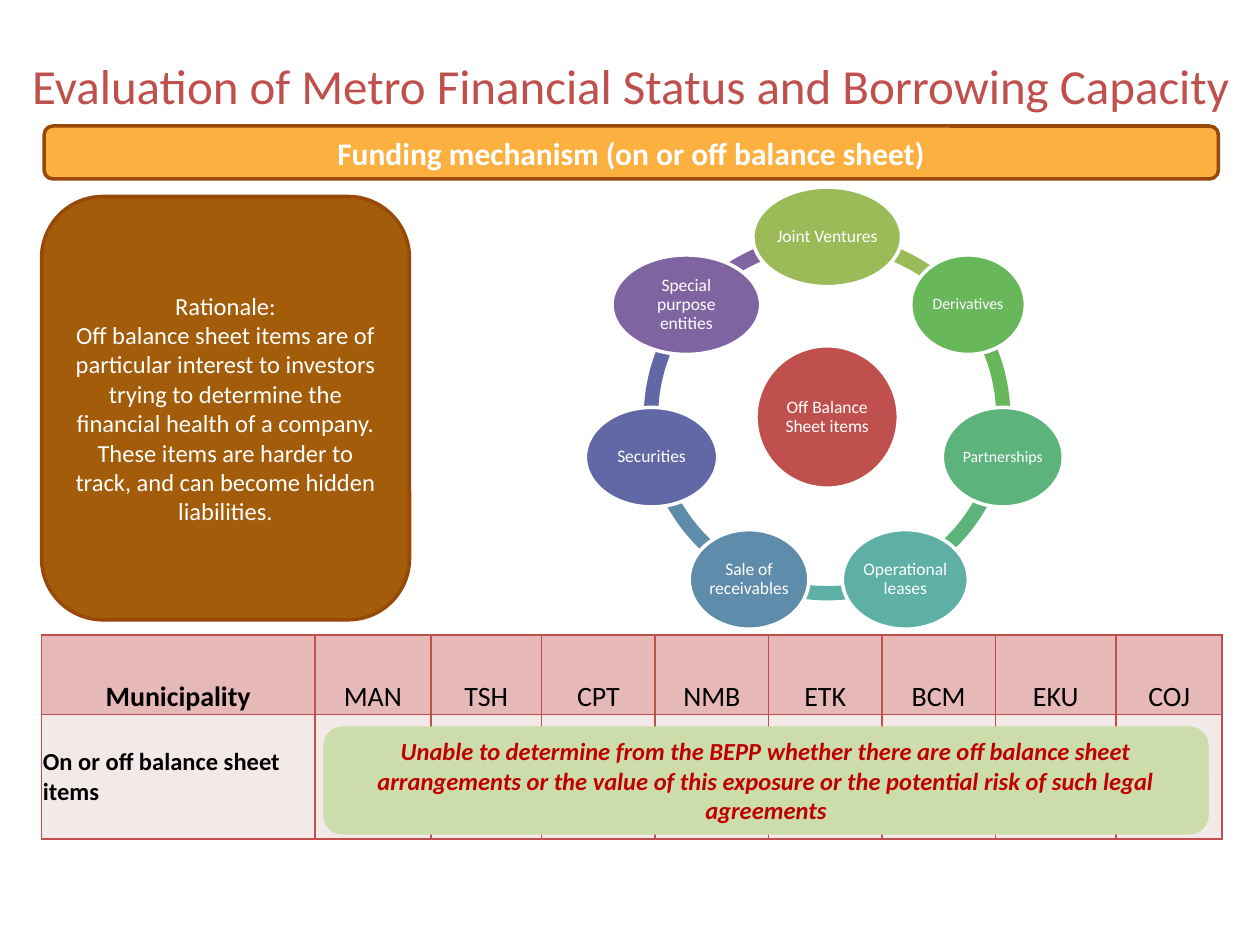
from dataclasses import dataclass
from math import cos, radians, sin

from lxml.etree import SubElement
from pptx import Presentation
from pptx.dml.color import RGBColor
from pptx.enum.shapes import MSO_SHAPE as Shape
from pptx.enum.text import MSO_ANCHOR as Anchor, PP_ALIGN as Align
from pptx.oxml.ns import qn
from pptx.util import Emu, Inches, Pt

FONT = "Calibri"
WHITE = RGBColor(0xFF, 0xFF, 0xFF)
BLACK = RGBColor(0, 0, 0)
RED = RGBColor(0xC0, 0x50, 0x4D)
DARK_RED = RGBColor(0xC0, 0, 0)
ORANGE = RGBColor(0xFB, 0xB0, 0x40)
BROWN = RGBColor(0xA2, 0x5C, 0x0A)
DARK_BROWN = RGBColor(0x98, 0x48, 0x07)
PINK = RGBColor(0xE6, 0xB9, 0xB8)
PALE_PINK = RGBColor(0xF4, 0xE9, 0xE9)
PALE_GREEN = RGBColor(0xCC, 0xDD, 0xAB)
GREEN = RGBColor(0x9B, 0xBB, 0x59)
LEAF = RGBColor(0x69, 0xB7, 0x5B)
JADE = RGBColor(0x5C, 0xB3, 0x7C)
TEAL = RGBColor(0x5E, 0xAF, 0xA6)
STEEL = RGBColor(0x60, 0x8C, 0xAB)
INDIGO = RGBColor(0x62, 0x67, 0xA6)
PURPLE = RGBColor(0x80, 0x64, 0xA2)

# Slide grid: 100 columns by 75 rows
prs = Presentation()
prs.slide_width, prs.slide_height = Inches(10), Inches(7.5)
COL, ROW = prs.slide_width / 100, prs.slide_height / 75


@dataclass
class Box:
    """A place on the grid, in columns and rows."""
    x: float
    y: float
    w: float
    h: float

    def emu(self) -> list[Emu]:
        return [Emu(round(n)) for n in
                (self.x * COL, self.y * ROW, self.w * COL, self.h * ROW)]


@dataclass
class Style:
    size: float
    color: RGBColor = WHITE
    bold: bool = False
    italic: bool = False


@dataclass
class Node:
    """One item of the cycle, with its width in columns."""
    text: str
    width: float
    color: RGBColor
    size: float = 10


def write(tf, text: str, style: Style, align=Align.CENTER, spacing=None) -> None:
    tf.text = text
    tf.word_wrap = True
    for p in tf.paragraphs:
        p.alignment = align
        if spacing:
            p.line_spacing = spacing
        for r in p.runs:
            f = r.font
            f.name, f.size, f.color.rgb = FONT, Pt(style.size), style.color
            f.bold, f.italic = style.bold, style.italic


def set_insets(obj, inset: float) -> None:
    obj.margin_left = obj.margin_right = Inches(inset)
    obj.margin_top = obj.margin_bottom = Inches(inset)


def add_shape(s, kind, box: Box, fill: RGBColor, line=None):
    sp = s.shapes.add_shape(kind, *box.emu())
    sp.shadow.inherit = False
    sp.fill.solid()
    sp.fill.fore_color.rgb = fill
    if line is None:
        sp.line.fill.background()
    else:
        sp.line.color.rgb, sp.line.width = line, Pt(2)
    return sp


def add_panel(s, box: Box, fill: RGBColor, line: RGBColor, text: str, style: Style) -> None:
    sp = add_shape(s, Shape.ROUNDED_RECTANGLE, box, fill, line)
    sp.text_frame.vertical_anchor = Anchor.MIDDLE
    write(sp.text_frame, text, style)


def add_bubble(s, cx: float, cy: float, w: float, h: float, node: Node) -> None:
    sp = add_shape(s, Shape.OVAL, Box(cx - w / 2, cy - h / 2, w, h), node.color, WHITE)
    sp.text_frame.vertical_anchor = Anchor.MIDDLE
    set_insets(sp.text_frame, 0.01)
    write(sp.text_frame, node.text, Style(node.size), spacing=0.9)


def add_cycle(s, cx: float, cy: float, radius: float, hub: Node, nodes: list[Node]) -> None:
    step = 360 / len(nodes)
    ring = 29.1
    # Arcs run clockwise from each node to the next; angles are 0.6 units a degree
    for i, node in reversed(list(enumerate(nodes))):
        arc = add_shape(s, Shape.BLOCK_ARC,
                        Box(cx - ring / 2, cy - ring / 2, ring, ring), node.color)
        for k in (0, 1):
            arc.adjustments[k] = (270 + (i + k) * step) % 360 * 0.6
        arc.adjustments[2] = 0.039
    add_bubble(s, cx, cy, hub.width, hub.width, hub)
    for i, node in enumerate(nodes):
        angle = radians(i * step)
        add_bubble(s, cx + radius * sin(angle), cy - radius * cos(angle),
                   node.width, 7.9, node)


def style_cell(cell, fill: RGBColor, anchor) -> None:
    tc_pr = cell._tc.get_or_add_tcPr()
    for side in ("a:lnL", "a:lnR", "a:lnT", "a:lnB"):
        ln = SubElement(tc_pr, qn(side), w=str(Pt(1)))
        SubElement(SubElement(ln, qn("a:solidFill")), qn("a:srgbClr"), val=str(RED))
    cell.fill.solid()
    cell.fill.fore_color.rgb = fill
    cell.vertical_anchor = anchor
    set_insets(cell, 0.01)
    cell.margin_bottom = 0


def add_metro_table(s, box: Box, widths: list[float], heights: list[float],
                    header: list[str], label: str) -> None:
    table = s.shapes.add_table(2, len(widths), *box.emu()).table
    table.first_row = table.horz_banding = False
    for column, w in zip(table.columns, widths):
        column.width = Emu(round(w * COL))
    for row, h in zip(table.rows, heights):
        row.height = Emu(round(h * ROW))
    for i, name in enumerate(header):
        top, low = table.cell(0, i), table.cell(1, i)
        style_cell(top, PINK, Anchor.BOTTOM)
        style_cell(low, PALE_PINK, Anchor.MIDDLE)
        write(top.text_frame, name, Style(16, BLACK, bold=i == 0))
    write(table.cell(1, 0).text_frame, label, Style(14, BLACK, bold=True), Align.LEFT)


def main() -> None:
    s = prs.slides.add_slide(prs.slide_layouts[6])

    # Title and banner
    tf = s.shapes.add_textbox(*Box(1.7, 4.2, 96.7, 5.1).emu()).text_frame
    set_insets(tf, 0)
    tf.vertical_anchor = Anchor.MIDDLE
    write(tf, "Evaluation of Metro Financial Status and Borrowing Capacity", Style(28, RED))
    add_panel(s, Box(3.5, 10, 93.2, 4.2), ORANGE, DARK_BROWN,
              "Funding mechanism (on or off balance sheet)", Style(18, bold=True))

    # Rationale
    add_panel(s, Box(3.3, 15.6, 29.2, 33.6), BROWN, DARK_BROWN,
              "Rationale:\nOff balance sheet items are of particular interest to investors "
              "trying to determine the financial health of a company. These items are "
              "harder to track, and can become hidden liabilities.", Style(14))

    # Municipality table and the finding laid over it
    add_metro_table(s, Box(3.3, 50.4, 93.4, 16.2),
                    [21.7, 9.2, 8.8, 9, 9, 9, 9, 9.6, 8.4], [6.3, 9.9],
                    ["Municipality", "MAN", "TSH", "CPT", "NMB", "ETK", "BCM", "EKU", "COJ"],
                    "On or off balance sheet items")
    add_panel(s, Box(25.8, 57.8, 70, 8.3), PALE_GREEN, PALE_GREEN,
              "Unable to determine from the BEPP whether there are off balance sheet "
              "arrangements or the value of this exposure or the potential risk of such "
              "legal agreements", Style(14, DARK_RED, bold=True, italic=True))

    # Cycle of off balance sheet items
    add_cycle(s, 65.65, 33.1, 14.3, Node("Off Balance Sheet items", 11.3, RED), [
        Node("Joint Ventures", 11.8, GREEN),
        Node("Derivatives", 9.1, LEAF, 9),
        Node("Partnerships", 9.6, JADE, 9),
        Node("Operational leases", 10, TEAL),
        Node("Sale of receivables", 9.5, STEEL),
        Node("Securities", 10.5, INDIGO),
        Node("Special purpose entities", 11.8, PURPLE),
    ])
    prs.save("out.pptx")


if __name__ == "__main__":
    main()
